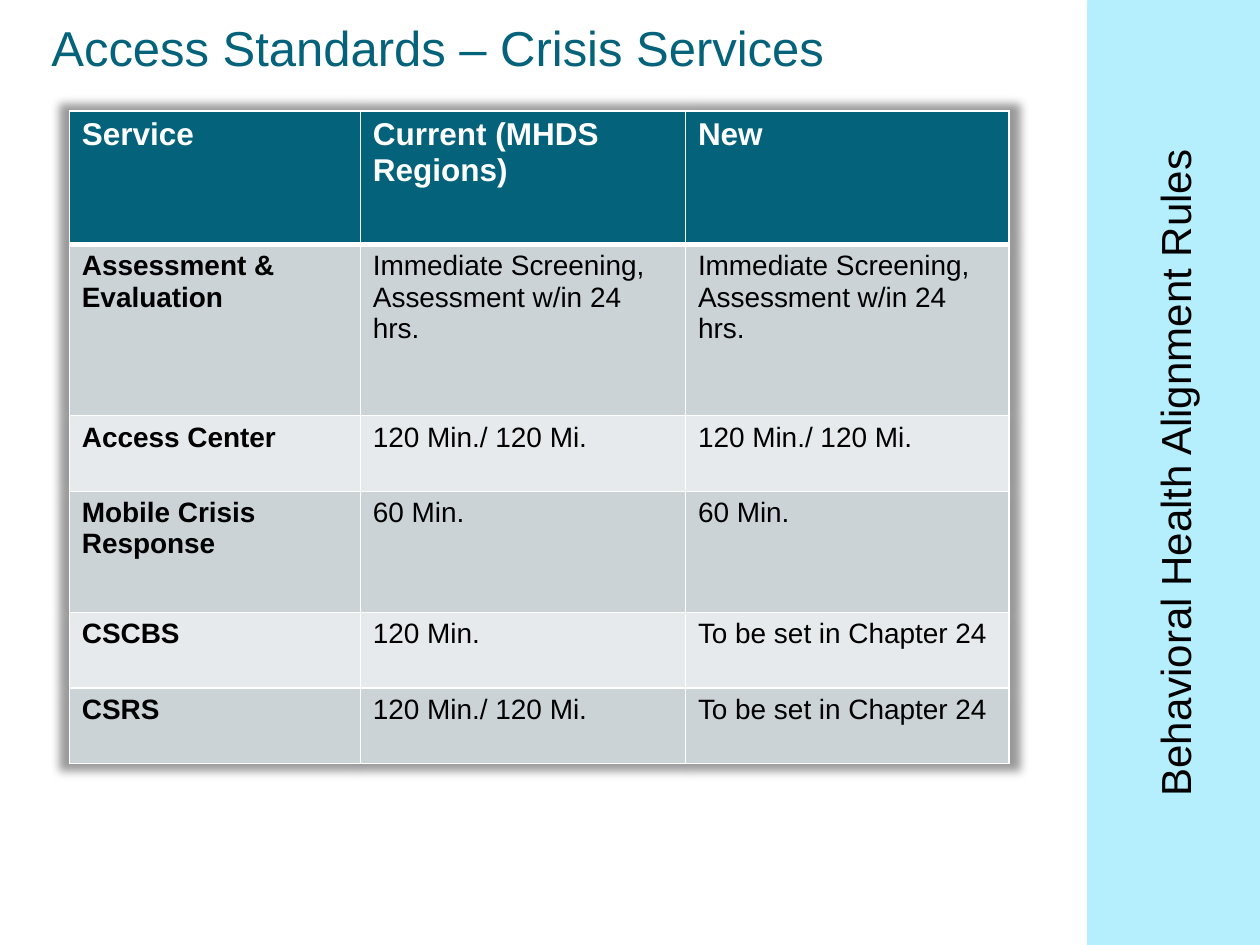
from pptx import Presentation
from pptx.dml.color import RGBColor
from pptx.enum.text import MSO_ANCHOR, PP_ALIGN
from pptx.oxml import parse_xml
from pptx.oxml.ns import nsdecls
from pptx.util import Inches, Pt

WHITE, BLACK, TEAL, BAND = "FFFFFF", "000000", "04627A", "B5EEFD"
ROW_FILLS = ["CCD3D7", "E7EAEC"]
COLUMN_WIDTHS = [2.31, 2.58, 2.57]
ROW_HEIGHTS = [1.06, 1.36, 0.6, 0.96, 0.6, 0.6]
STANDARDS = [
    ["Service", "Current (MHDS Regions)", "New"],
    ["Assessment & Evaluation", "Immediate Screening, Assessment w/in 24 hrs.",
     "Immediate Screening, Assessment w/in 24 hrs."],
    ["Access Center", "120 Min./ 120 Mi.", "120 Min./ 120 Mi."],
    ["Mobile Crisis Response", "60 Min.", "60 Min."],
    ["CSCBS", "120 Min.", "To be set in Chapter 24"],
    ["CSRS", "120 Min./ 120 Mi.", "To be set in Chapter 24"],
]
PANEL_OUTLINE = [(0, -0.02), (8.91, 0), (9.21, 0.86), (9.39, 2.56), (9.65, 4.11),
                 (9.66, 4.7), (9.69, 5.6), (9.69, 6.41), (9.56, 7.54), (0, 7.52)]


def color(value):
    return RGBColor.from_string(value)


def paint(fill, value):
    fill.solid()
    fill.fore_color.rgb = color(value)


def write(frame, text, size, ink, bold=False, align=None, spacing=None):
    frame.word_wrap = True
    para = frame.paragraphs[0]
    para.alignment = align
    para.line_spacing = spacing
    span = para.add_run()
    span.text = text
    span.font.name = "Arial"
    span.font.size = Pt(size)
    span.font.bold = bold
    span.font.color.rgb = color(ink)


def add_panel(page):
    """Draw the white page area behind everything else."""
    start, *rest = [(Inches(x), Inches(y)) for x, y in PANEL_OUTLINE]
    builder = page.shapes.build_freeform(*start)
    builder.add_line_segments(rest, close=True)
    panel = builder.convert_to_shape()
    panel.shadow.inherit = False
    paint(panel.fill, WHITE)
    panel.line.fill.background()
    page.shapes.title.element.addprevious(panel.element)


def add_side_title(page, text):
    title = page.shapes.title
    title.left, title.top = Inches(5.57), Inches(3.07)
    title.width, title.height = Inches(7.5), Inches(1.37)
    title.rotation = 270
    paint(title.fill, BAND)
    paint(title.line.fill, BAND)
    title.line.width = Pt(1)
    title.text_frame.vertical_anchor = MSO_ANCHOR.MIDDLE
    write(title.text_frame, text, 24, BLACK, align=PP_ALIGN.CENTER)


def add_heading(page, text):
    box = page.shapes.add_textbox(Inches(0.31), Inches(0.14), Inches(8.68), Inches(0.72))
    write(box.text_frame, text, 28, TEAL, spacing=0.9)


def set_borders(cell, **widths):
    """Draw white borders; the keys L, R, T and B give widths in points."""
    properties = cell._tc.get_or_add_tcPr()
    for side, width in widths.items():
        properties.append(parse_xml(
            f'<a:ln{side} {nsdecls("a")} w="{Pt(width)}"><a:solidFill>'
            f'<a:srgbClr val="{WHITE}"/></a:solidFill></a:ln{side}>'))


def add_glow(table):
    """Give the table a soft, centred shadow slightly larger than itself."""
    table._tbl.tblPr.insert(0, parse_xml(
        f'<a:effectLst {nsdecls("a")}><a:outerShdw blurRad="{Pt(5)}" sx="102000" '
        f'sy="102000" algn="ctr" rotWithShape="0"><a:srgbClr val="{BLACK}">'
        '<a:alpha val="40000"/></a:srgbClr></a:outerShdw></a:effectLst>'))


def add_standards_table(page):
    table = page.shapes.add_table(
        len(ROW_HEIGHTS), len(COLUMN_WIDTHS), Inches(0.55), Inches(0.88),
        Inches(sum(COLUMN_WIDTHS)), Inches(sum(ROW_HEIGHTS))).table
    add_glow(table)
    for column, width in zip(table.columns, COLUMN_WIDTHS):
        column.width = Inches(width)
    for r, (height, texts) in enumerate(zip(ROW_HEIGHTS, STANDARDS)):
        table.rows[r].height = Inches(height)
        header = r == 0
        for c, text in enumerate(texts):
            cell = table.cell(r, c)
            set_borders(cell, L=1, R=1, T=3 if r == 1 else 1, B=3 if header else 1)
            paint(cell.fill, TEAL if header else ROW_FILLS[(r - 1) % 2])
            write(cell.text_frame, text, 18 if header else 16,
                  WHITE if header else BLACK, bold=header or c == 0)


def main():
    deck = Presentation()
    deck.slide_width, deck.slide_height = Inches(10), Inches(7.5)
    page = deck.slides.add_slide(deck.slide_layouts[5])
    paint(page.background.fill, "C6D668")
    add_panel(page)
    add_side_title(page, "Behavioral Health Alignment Rules")
    add_standards_table(page)
    add_heading(page, "Access Standards – Crisis Services")
    deck.save("out.pptx")


if __name__ == "__main__":
    main()
